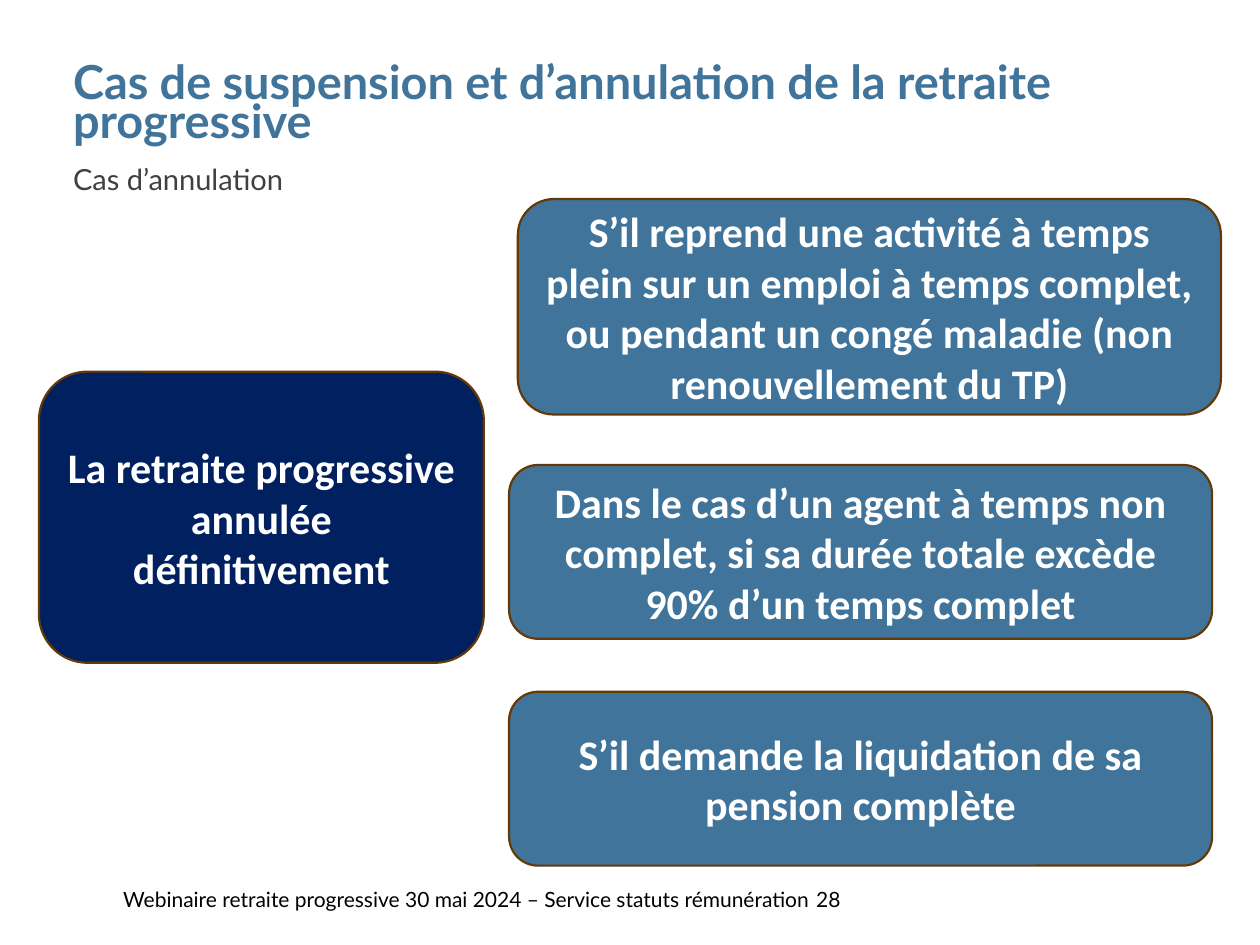
from pptx import Presentation
from pptx.dml.color import RGBColor
from pptx.enum.shapes import MSO_SHAPE
from pptx.enum.text import MSO_ANCHOR, MSO_AUTO_SIZE, PP_ALIGN
from pptx.util import Inches, Pt

ROUND = MSO_SHAPE.ROUNDED_RECTANGLE
MIDDLE, TOP = MSO_ANCHOR.MIDDLE, MSO_ANCHOR.TOP
CENTER, LEFT = PP_ALIGN.CENTER, PP_ALIGN.LEFT
FIXED = MSO_AUTO_SIZE.NONE

# Content
NAVY, BLUE, BROWN = "002060", "40749B", "643908"
HEAD = [  # text, size, colour, bold
    ("Cas de suspension et d’annulation de la retraite progressive",
     26.8, BLUE, True),
    ("Cas d’annulation", 16.6, "404040", False),
]
RESULT = "La retraite progressive annulée définitivement"
CASES = [  # text, left, top, height
    ("S’il reprend une activité à temps plein sur un emploi à temps complet, "
     "ou pendant un congé maladie (non renouvellement du TP)",
     4.11, 1.58, 1.71),
    ("Dans le cas d’un agent à temps non complet, si sa durée totale excède "
     "90% d’un temps complet", 4.04, 3.69, 1.38),
    ("S’il demande la liquidation de sa pension complète", 4.04, 5.49, 1.38),
]
CASE_W = 5.58
FOOTER = ("Webinaire retraite progressive 30 mai 2024 – "
          "Service statuts rémunération \t28")


def color(code):
    return RGBColor.from_string(code)


def style(para, face, size, code, bold=False, align=LEFT):
    font = para.font
    font.name, font.size, font.bold = face, Pt(size), bold
    font.color.rgb = color(code)
    para.alignment = align


def place(shape, *box):
    shape.left, shape.top, shape.width, shape.height = map(Inches, box)


def add_card(slide, text, fill, *box):
    card = slide.shapes.add_shape(ROUND, *map(Inches, box))
    card.shadow.inherit = False
    card.fill.solid()
    card.fill.fore_color.rgb = color(fill)
    card.line.color.rgb = color(BROWN)
    card.line.width = Pt(1.25)
    frame = card.text_frame
    frame.word_wrap = True
    frame.vertical_anchor = MIDDLE
    frame.text = text
    style(frame.paragraphs[0], "Calibri", 24, "FFFFFF", True, CENTER)


def add_head(slide):
    body = slide.placeholders[1]
    place(body, 0.58, 0.49, 8.84, 5.43)
    frame = body.text_frame
    frame.auto_size = FIXED
    frame.vertical_anchor = TOP
    frame.margin_left = frame.margin_right = 0
    frame.text = "\n".join(row[0] for row in HEAD)
    for para, (_, size, code, bold) in zip(frame.paragraphs, HEAD):
        style(para, "Lato", size, code, bold)
        para.line_spacing = 0.7
        para.space_before, para.space_after = Pt(12), Pt(2)
        # No bullet, no indent
        props = para._p.get_or_add_pPr()
        props.set("marL", "0")
        props.set("indent", "0")
        props.get_or_change_to_buNone() if hasattr(
            props, "get_or_change_to_buNone") else props.insert_element_before(
            props.makeelement(
                "{http://schemas.openxmlformats.org/drawingml/2006/main}buNone"),
            "a:tabLst", "a:defRPr", "a:extLst")


def add_footer(slide):
    box = slide.shapes.add_textbox(*map(Inches, (0.88, 6.99, 8.74, 0.3)))
    box.text_frame.word_wrap = True
    box.text_frame.text = FOOTER
    style(box.text_frame.paragraphs[0], "Lato", 12, "000000")


def main():
    deck = Presentation()
    deck.slide_width, deck.slide_height = Inches(10), Inches(7.5)
    slide = deck.slides.add_slide(deck.slide_layouts[1])

    # The heading sits in the body, so the title frame goes
    title = slide.shapes.title.element
    title.getparent().remove(title)

    add_footer(slide)
    add_head(slide)

    # Outcome on the left, its causes on the right
    add_card(slide, RESULT, NAVY, 0.31, 2.95, 3.53, 2.31)
    for text, left, top, high in CASES:
        add_card(slide, text, BLUE, left, top, CASE_W, high)

    deck.save("out.pptx")


if __name__ == "__main__":
    main()
